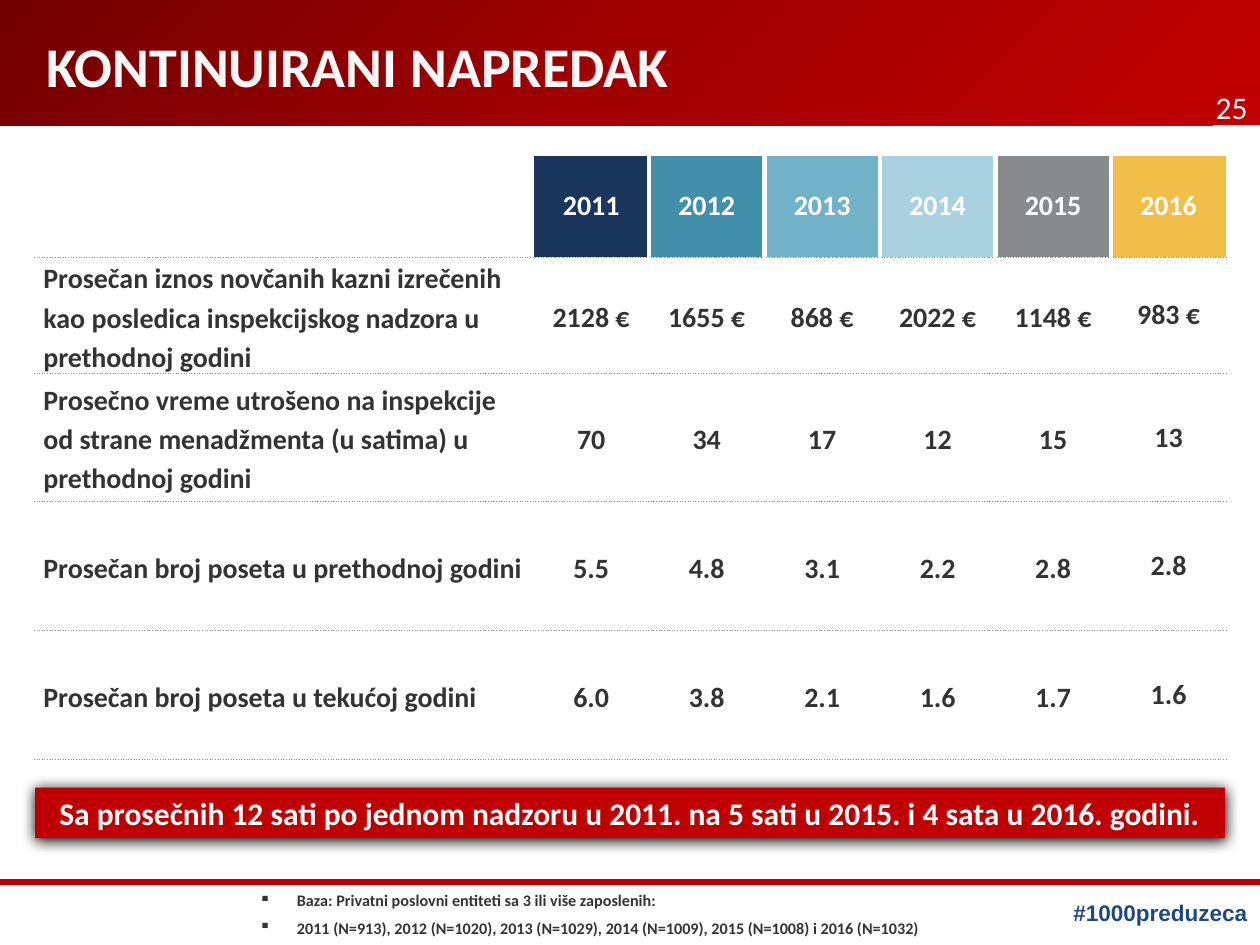
from lxml import etree
from pptx import Presentation
from pptx.dml.color import RGBColor
from pptx.enum import shapes, text
from pptx.oxml import parse_xml
from pptx.oxml.ns import qn
from pptx.util import Pt

WHITE = RGBColor(0xFF, 0xFF, 0xFF)
OFF_WHITE = RGBColor(0xF8, 0xF8, 0xF8)
RED = RGBColor(0xC0, 0x00, 0x00)
DARK_RED = RGBColor(0x72, 0x00, 0x00)
MID_RED = RGBColor(0xA2, 0x00, 0x00)
BLUE = RGBColor(0x1F, 0x49, 0x7D)
INK = RGBColor(0x33, 0x33, 0x33)
GREY = RGBColor(0x88, 0x8B, 0x8D)
BLACK = RGBColor(0, 0, 0)

TITLE = "KONTINUIRANI NAPREDAK"
PAGE = "25"
HASHTAG = "#1000preduzeca"
BANNER = "Sa prosečnih 12 sati po jednom nadzoru u 2011. na 5 sati u 2015. i 4 sata u 2016. godini."
NOTES = [
    "Baza: Privatni poslovni entiteti sa 3 ili više zaposlenih:",
    "2011 (N=913), 2012 (N=1020), 2013 (N=1029), 2014 (N=1009), 2015 (N=1008) i 2016 (N=1032)",
]
YEARS = [
    ("2011", RGBColor(0x1B, 0x36, 0x5D)),
    ("2012", RGBColor(0x41, 0x8F, 0xAB)),
    ("2013", RGBColor(0x71, 0xB2, 0xC9)),
    ("2014", RGBColor(0xAA, 0xD1, 0xDF)),
    ("2015", GREY),
    ("2016", RGBColor(0xF1, 0xBE, 0x48)),
]
ROWS = [
    ("Prosečan iznos novčanih kazni izrečenih kao posledica inspekcijskog nadzora u prethodnoj godini",
     "2128 €", "1655 €", "868 €", "2022 €", "1148 €", "983 €"),
    ("Prosečno vreme utrošeno na inspekcije od strane menadžmenta (u satima) u prethodnoj godini",
     "70", "34", "17", "12", "15", "13"),
    ("Prosečan broj poseta u prethodnoj godini", "5.5", "4.8", "3.1", "2.2", "2.8", "2.8"),
    ("Prosečan broj poseta u tekućoj godini", "6.0", "3.8", "2.1", "1.6", "1.7", "1.6"),
]
ROW_HEIGHTS = [58.3, 66.3, 73.6, 73.6, 73.6]
LABEL_W, YEAR_W = 285, 66

A = 'xmlns:a="http://schemas.openxmlformats.org/drawingml/2006/main"'
LEFT, CENTER, RIGHT = text.PP_ALIGN.LEFT, text.PP_ALIGN.CENTER, text.PP_ALIGN.RIGHT
MIDDLE = text.MSO_ANCHOR.MIDDLE


def write(p, words, size, color, align=LEFT, bold=True, font="Calibri", spacing=None):
    p.text = words
    p.alignment = align
    p.line_spacing = spacing
    f = p.font
    f.size, f.bold, f.name = Pt(size), bold, font
    f.color.rgb = color


def add_text(s, x, y, w, h):
    tf = s.shapes.add_textbox(Pt(x), Pt(y), Pt(w), Pt(h)).text_frame
    tf.word_wrap = True
    return tf


def add_rect(s, x, y, w, h, color):
    sp = s.shapes.add_shape(shapes.MSO_SHAPE.RECTANGLE, Pt(x), Pt(y), Pt(w), Pt(h))
    sp.shadow.inherit = False
    sp.fill.solid()
    sp.fill.fore_color.rgb = color
    sp.line.fill.background()
    return sp


def add_header(s):
    sp = add_rect(s, 0, 0, 720, 71.5, RED)
    stops = "".join(
        f'<a:gs pos="{pos}"><a:srgbClr val="{color}"/></a:gs>'
        for pos, color in ((0, DARK_RED), (50000, MID_RED), (100000, RED)))
    gradient = parse_xml(
        f'<a:gradFill {A} rotWithShape="1"><a:gsLst>{stops}</a:gsLst>'
        '<a:path path="circle"><a:fillToRect r="100000" b="100000"/></a:path></a:gradFill>')
    pr = sp._element.spPr
    pr.replace(pr.find(qn("a:solidFill")), gradient)


def add_rule(s):
    line = s.shapes.add_connector(shapes.MSO_CONNECTOR.STRAIGHT, 0, Pt(504), Pt(720), Pt(504))
    line.line.color.rgb = RED
    line.line.width = Pt(3)
    etree.SubElement(line._element.spPr, qn("a:effectLst"))


def add_border(cell, side, color, width, dash="solid"):
    cell._tc.get_or_add_tcPr().append(parse_xml(
        f'<a:ln{side} {A} w="{Pt(width)}"><a:solidFill><a:srgbClr val="{color}"/>'
        f'</a:solidFill><a:prstDash val="{dash}"/></a:ln{side}>'))


def set_margins(box, x, y):
    box.margin_left = box.margin_right = Pt(x)
    box.margin_top = box.margin_bottom = Pt(y)


def fill_cell(cell, row, col):
    last = col == len(YEARS)
    cell.vertical_anchor = MIDDLE
    if row == 0:
        if col > 1:
            add_border(cell, "L", WHITE, 3)
        if col:
            add_border(cell, "R", WHITE, 1 if last else 3)
    else:
        add_border(cell, "T", GREY, 0.5, "sysDot")
    add_border(cell, "B", GREY, 0.5, "sysDot")
    if row and col:
        cell.fill.background()
    else:
        cell.fill.solid()
        cell.fill.fore_color.rgb = YEARS[col - 1][1] if col else WHITE

    p = cell.text_frame.paragraphs[0]
    if row == 0:
        set_margins(cell, 7.2, 5)
        if col:
            write(p, YEARS[col - 1][0], 16, WHITE, CENTER)
    else:
        set_margins(cell, *((3, 3.6) if last else (5, 0)))
        write(p, ROWS[row - 1][col], 16, INK, CENTER if col else LEFT,
              spacing=None if last else 1.15)


def add_table(s):
    rows, cols = len(ROWS) + 1, len(YEARS) + 1
    table = s.shapes.add_table(rows, cols, Pt(19.8), Pt(88.6),
                               Pt(LABEL_W + YEAR_W * len(YEARS)), Pt(sum(ROW_HEIGHTS))).table
    table.first_row = table.horz_banding = False
    for col in range(cols):
        table.columns[col].width = Pt(YEAR_W if col else LABEL_W)
    for row in range(rows):
        table.rows[row].height = Pt(ROW_HEIGHTS[row])
        for col in range(cols):
            fill_cell(table.cell(row, col), row, col)


def add_notes(s):
    tf = add_text(s, 141, 505.5, 428.5, 33)
    for i, note in enumerate(NOTES):
        p = tf.add_paragraph() if i else tf.paragraphs[0]
        write(p, note, 9.2, INK)
        p.space_before = Pt(4.6)
        pr = p._p.get_or_add_pPr()
        pr.set("marL", str(Pt(21.6)))
        pr.set("indent", str(Pt(-21.6)))
        pr.find(qn("a:spcBef")).addnext(parse_xml(f'<a:buChar {A} char="▪"/>'))


def add_banner(s):
    sp = add_rect(s, 20, 450, 680, 29, RED)
    sp._element.spPr.find(qn("a:effectLst")).append(parse_xml(
        f'<a:outerShdw {A} blurRad="{Pt(8.5)}" dist="{Pt(1)}" dir="5400000" algn="t" '
        f'rotWithShape="0"><a:srgbClr val="{BLACK}"/></a:outerShdw>'))
    tf = sp.text_frame
    tf.word_wrap = True
    tf.vertical_anchor = text.MSO_ANCHOR.TOP
    set_margins(tf, 6.5, 3.6)
    write(tf.paragraphs[0], BANNER, 18, WHITE, CENTER)


def main():
    prs = Presentation()
    prs.slide_width, prs.slide_height = Pt(720), Pt(540)
    s = prs.slides.add_slide(prs.slide_layouts[6])
    add_header(s)
    add_rule(s)
    tf = add_text(s, 606, 510, 114, 23)
    write(tf.paragraphs[0], HASHTAG, 12.9, BLUE, CENTER, font="Arial")
    tf = add_text(s, 679, 46.8, 41, 23)
    write(tf.paragraphs[0], PAGE, 18, OFF_WHITE, RIGHT, bold=False)
    tf = add_text(s, 19.5, 10.8, 659, 60)
    tf.vertical_anchor = MIDDLE
    write(tf.paragraphs[0], TITLE, 32, OFF_WHITE, text.PP_ALIGN.JUSTIFY, spacing=0.8)
    add_notes(s)
    add_table(s)
    add_banner(s)
    prs.save("out.pptx")


if __name__ == "__main__":
    main()
